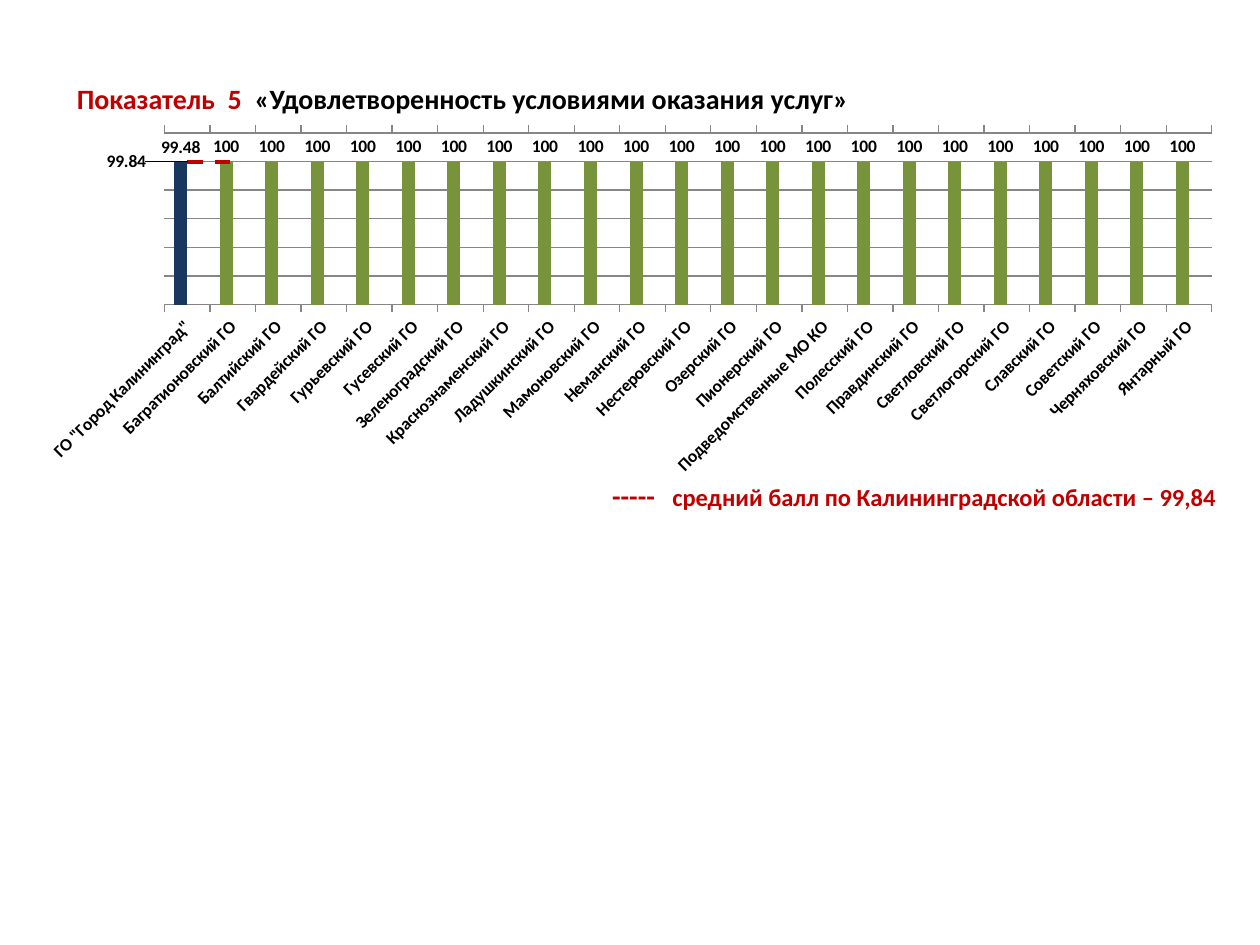
from lxml import etree
from pptx import Presentation, util as u
from pptx.chart.data import CategoryChartData
from pptx.dml.color import RGBColor
from pptx.enum import chart as ch, dml, text
from pptx.oxml import parse_xml
from pptx.oxml.ns import nsdecls, qn

THEME = {
    "font": "Calibri",
    "accent": RGBColor.from_string("C00000"),
    "ink": RGBColor.from_string("000000"),
    "bar": RGBColor.from_string("77933C"),
    "city": RGBColor.from_string("17375E"),
    "empty": RGBColor.from_string("C0504D"),
    "axis": RGBColor.from_string("868686"),
    "heading": u.Pt(16),
    "note": u.Pt(14),
    "label": u.Pt(10),
}

MUNICIPALITIES = [
    'ГО "Город Калининград"', "Багратионовский ГО", "Балтийский ГО",
    "Гвардейский ГО", "Гурьевский ГО", "Гусевский ГО", "Зеленоградский ГО",
    "Краснознаменский ГО", "Ладушкинский ГО", "Мамоновский ГО",
    "Неманский ГО", "Нестеровский ГО", "Озерский ГО", "Пионерский ГО",
    "Подведомственные МО КО", "Полесский ГО", "Правдинский ГО",
    "Светловский ГО", "Светлогорский ГО", "Славский ГО", "Советский ГО",
    "Черняховский ГО", "Янтарный ГО",
]
SCORES = [99.48] + [100] * (len(MUNICIPALITIES) - 1)
AVERAGE = 99.84


def write_runs(frame, runs):
    """Fill the first paragraph with bold (text, size, colour) runs."""
    settings = {"vertical_anchor": text.MSO_ANCHOR.TOP,
                "auto_size": text.MSO_AUTO_SIZE.SHAPE_TO_FIT_TEXT}
    for name, value in settings.items():
        setattr(frame, name, value)
    paragraph = frame.paragraphs[0]
    paragraph.alignment = text.PP_ALIGN.LEFT
    for words, size, color in runs:
        run = paragraph.add_run()
        run.text = words
        for name, value in {"name": THEME["font"], "size": size, "bold": True}.items():
            setattr(run.font, name, value)
        run.font.color.rgb = color


def chart_xml(tag, body):
    return parse_xml(f"<c:{tag} {nsdecls('c')}>{body}</c:{tag}>")


prs = Presentation()
prs.slide_width, prs.slide_height = u.Inches(10), u.Inches(7.5)
slide = prs.slides.add_slide(prs.slide_layouts[5])

# Heading
heading = slide.shapes.title
box = {"left": 0.51, "top": 0.6, "width": 9.33, "height": 0.37}
for side, inches in box.items():
    setattr(heading, side, u.Inches(inches))
write_runs(heading.text_frame, [
    ("Показатель  5", THEME["heading"], THEME["accent"]),
    ("  «Удовлетворенность условиями оказания услуг»", THEME["heading"], THEME["ink"]),
])

# Key to the average line
key = slide.shapes.add_textbox(u.Inches(4.76), u.Inches(3.75), u.Inches(5.02), u.Inches(0.37))
key.text_frame.word_wrap = False
write_runs(key.text_frame, [
    ("----- ", THEME["heading"], THEME["accent"]),
    ("  средний балл по Калининградской области – 99,84", THEME["note"], THEME["accent"]),
])

# Scores as columns
data = CategoryChartData()
data.categories = MUNICIPALITIES
data.add_series("Series 1", SCORES)
data.add_series("Series 2", [0, 0])
data.add_series("Series 3", [AVERAGE, AVERAGE])
chart = slide.shapes.add_chart(
    ch.XL_CHART_TYPE.COLUMN_CLUSTERED, u.Inches(0.2), u.Inches(0.99),
    u.Inches(9.61), u.Inches(2.83), data).chart
chart.has_legend = chart.has_title = False
for name, value in {"name": THEME["font"], "size": THEME["label"]}.items():
    setattr(chart.font, name, value)
chart.font.color.rgb = THEME["ink"]

columns = chart.plots[0]
for name, value in {"gap_width": 150, "overlap": 0, "vary_by_categories": False}.items():
    setattr(columns, name, value)
scores, empty, average = columns.series
for series, color in ((scores, THEME["bar"]), (empty, THEME["empty"]),
                      (scores.points[0], THEME["city"])):
    series.format.fill.solid()
    series.format.fill.fore_color.rgb = color
score_labels = scores.data_labels
for name, value in {"show_value": True,
                    "position": ch.XL_LABEL_POSITION.OUTSIDE_END}.items():
    setattr(score_labels, name, value)
score_labels.font.bold = True
score_labels.font.size = THEME["label"]

# Axes
values, categories = chart.value_axis, chart.category_axis
for name, value in {"minimum_scale": 0, "maximum_scale": 120, "major_unit": 20,
                    "has_major_gridlines": True, "visible": False}.items():
    setattr(values, name, value)
categories.major_tick_mark = ch.XL_TICK_MARK.OUTSIDE
categories.tick_labels.font.bold = True
categories.tick_labels.font.size = THEME["label"]
categories.tick_labels.font.color.rgb = THEME["ink"]
label_body = categories.tick_labels.font._element.getparent().getparent().getparent().find(qn("a:bodyPr"))
label_body.set("rot", "-2700000")
label_body.set("vert", "horz")
for line in (values.major_gridlines.format.line, categories.format.line):
    line.color.rgb = THEME["axis"]
    line.width = u.Pt(0.75)

# The average becomes a line on a second pair of axes
plot_area = chart._chartSpace.chart.plotArea
bar_chart = plot_area.find(qn("c:barChart"))
average_ser = average._element
bar_chart.remove(average_ser)
for extra in average_ser.findall(qn("c:invertIfNegative")):
    average_ser.remove(extra)
line_chart = chart_xml("lineChart", '<c:grouping val="standard"/><c:varyColors val="0"/>'
                       '<c:marker val="1"/><c:axId val="5001"/><c:axId val="5002"/>')
line_chart.insert(2, average_ser)
bar_chart.addnext(line_chart)

scaling = '<c:scaling><c:orientation val="minMax"/>{}</c:scaling>'
axis_line = (f'<c:spPr><a:ln {nsdecls("a")} w="9525"><a:solidFill>'
             f'<a:srgbClr val="{THEME["axis"]}"/></a:solidFill></a:ln></c:spPr>')
second_values = chart_xml("valAx", (
    '<c:axId val="5002"/>' + scaling.format('<c:max val="120"/><c:min val="0"/>')
    + '<c:delete val="1"/><c:axPos val="r"/><c:majorTickMark val="out"/>'
    '<c:tickLblPos val="nextTo"/><c:crossAx val="5001"/><c:crosses val="max"/>'
    '<c:crossBetween val="between"/><c:majorUnit val="20"/>'))
second_categories = chart_xml("catAx", (
    '<c:axId val="5001"/>' + scaling.format("")
    + '<c:delete val="0"/><c:axPos val="t"/><c:majorTickMark val="out"/>'
    '<c:minorTickMark val="none"/><c:tickLblPos val="none"/>' + axis_line
    + '<c:crossAx val="5002"/><c:crosses val="max"/>'))
plot_area.find(qn("c:valAx")).addnext(second_values)
second_values.addnext(second_categories)

average = chart.plots[1].series[0]
average.smooth = False
average.marker.style = ch.XL_MARKER_STYLE.NONE
stroke = average.format.line
stroke.color.rgb = THEME["accent"]
stroke.width = u.Pt(2.25)
stroke.dash_style = dml.MSO_LINE.DASH
average.data_labels.show_value = False
average_label = average.points[0].data_label
average_label.font.bold = True
average_label.font.size = THEME["label"]
average_label.position = ch.XL_LABEL_POSITION.LEFT

# Place the average's label left of the plot, and the plot inside the chart
label_layout = chart_xml("layout", '<c:manualLayout><c:x val="-0.03"/><c:y val="0"/></c:manualLayout>')
average._element.find(".//" + qn("c:dLbl")).find(qn("c:idx")).addnext(label_layout)
for layout in plot_area.findall(qn("c:layout")):
    plot_area.remove(layout)
plot_layout = chart_xml("layout", "<c:manualLayout/>")
for tag, value in (("layoutTarget", "inner"), ("xMode", "edge"), ("yMode", "edge"),
                   ("x", 0.115), ("y", 0.023), ("w", 0.865), ("h", 0.482)):
    etree.SubElement(plot_layout[0], qn(f"c:{tag}")).set("val", str(value))
plot_area.insert(0, plot_layout)

prs.save("out.pptx")
